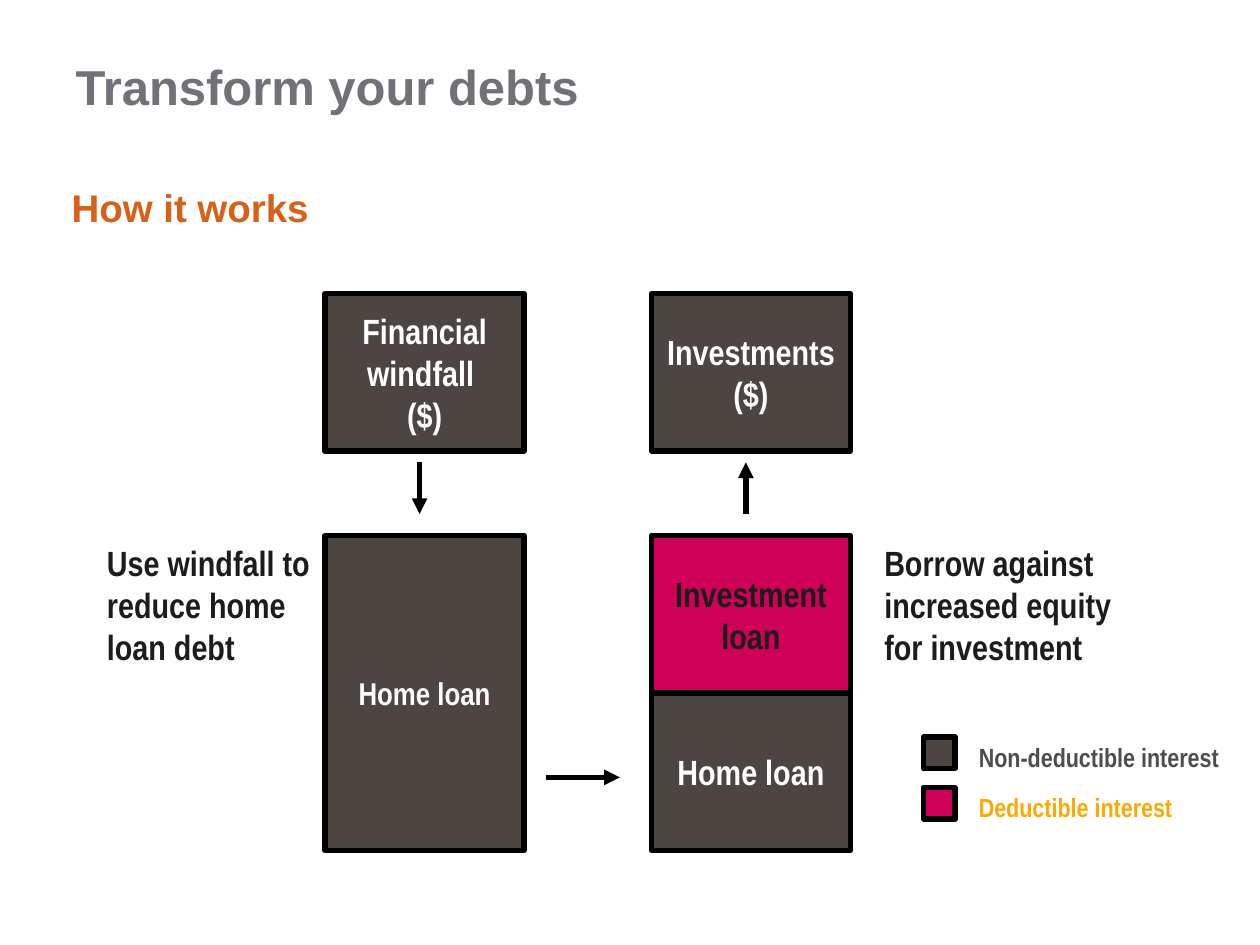
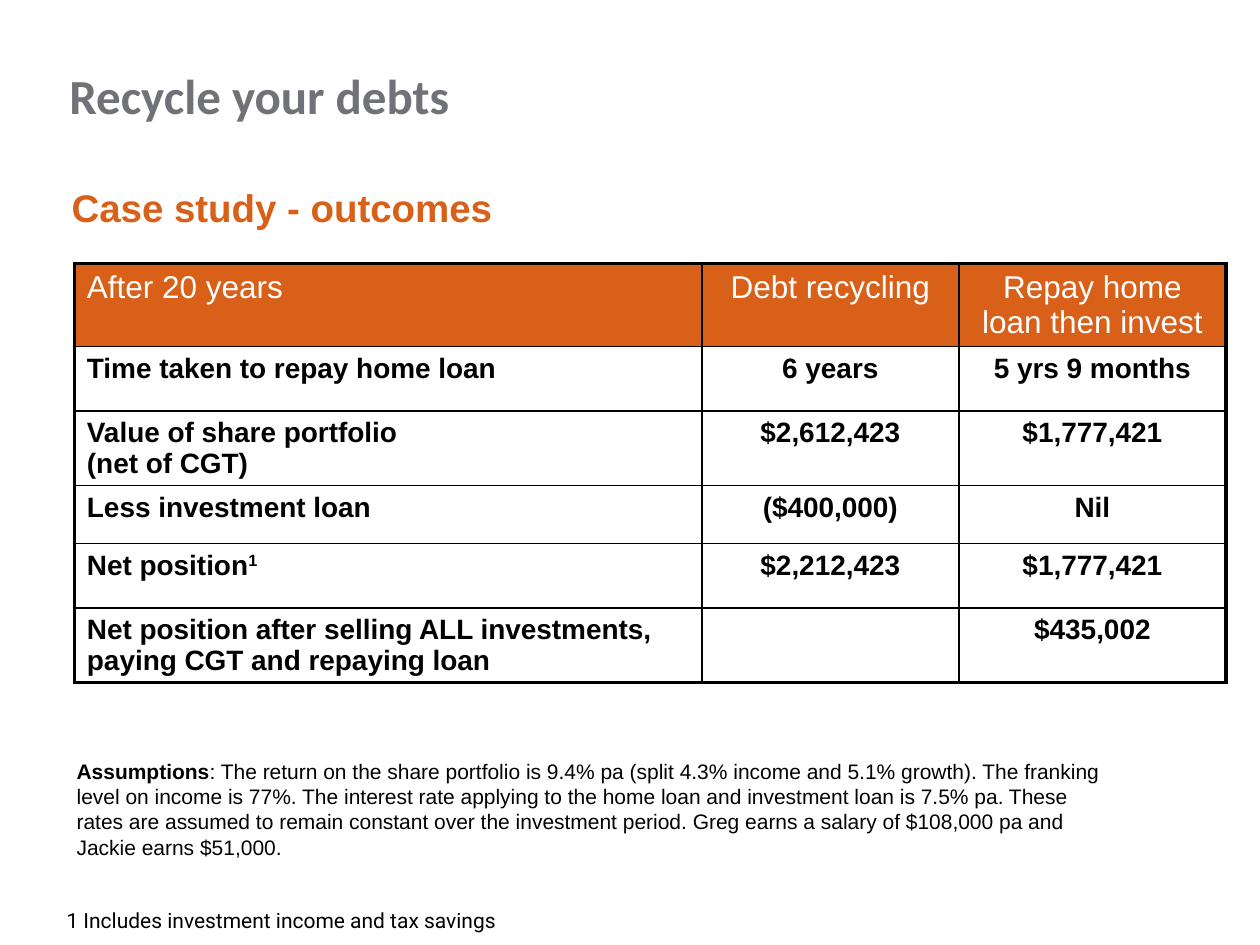
from lxml.etree import SubElement
from pptx import Presentation
from pptx.dml.color import RGBColor
from pptx.enum.shapes import MSO_CONNECTOR, MSO_SHAPE
from pptx.enum.text import MSO_ANCHOR, MSO_AUTO_SIZE, PP_ALIGN
from pptx.oxml.ns import qn
from pptx.util import Inches, Pt

LEFT, CENTER = PP_ALIGN.LEFT, PP_ALIGN.CENTER
TOP, MIDDLE = MSO_ANCHOR.TOP, MSO_ANCHOR.MIDDLE
NO_FIT = MSO_AUTO_SIZE.NONE
RECT = MSO_SHAPE.RECTANGLE
STRAIGHT = MSO_CONNECTOR.STRAIGHT

COLORS = {
    "title": "717278", "accent": "D86018", "loan": "4D4542",
    "invest": "CE0058", "dark": "1C1C1C", "gray": "4D4D4D",
    "gold": "FCA904", "black": "000000", "white": "FFFFFF",
}
SANS, NARROW = "Arial", "Arial Narrow"
THIN, THICK = 1, 2.25


def rgb(name):
    return RGBColor.from_string(COLORS[name])


def style(para, size, color, font=SANS, bold=True, align=LEFT):
    para.alignment = align
    para.font.size = Pt(size)
    para.font.name = font
    para.font.bold = bold
    para.font.color.rgb = rgb(color)


def write(frame, lines, size, color, anchor=TOP, wrap=True, **look):
    frame.auto_size = NO_FIT
    frame.word_wrap = wrap
    frame.vertical_anchor = anchor
    frame.text = "\n".join(lines)
    for para in frame.paragraphs:
        style(para, size, color, **look)


def add_text(slide, at, text, size, color, **look):
    box = slide.shapes.add_textbox(*map(Inches, at))
    write(box.text_frame, [text], size, color, **look)
    return box.text_frame


def add_slide(deck, title, at, font, head):
    """Start a slide with its gray title and orange heading."""
    slide = deck.slides.add_slide(deck.slide_layouts[5])
    holder = slide.shapes.title
    holder.left, holder.top, holder.width, holder.height = map(Inches, at)
    write(holder.text_frame, [title], 28, "title", MIDDLE, font=font)
    add_text(slide, (0.47, 1.41, 3.55, 0.47), head, 22, "accent", wrap=False)
    return slide


def add_box(slide, at, fill, lines=(), size=20, color="white", wrap=True):
    box = slide.shapes.add_shape(RECT, *map(Inches, at))
    box.shadow.inherit = False
    box.fill.solid()
    box.fill.fore_color.rgb = rgb(fill)
    box.line.color.rgb = rgb("black")
    box.line.width = Pt(3)
    if lines:
        write(box.text_frame, lines, size, color, MIDDLE, wrap,
              font=NARROW, align=CENTER)


def add_arrow(slide, start, end):
    arrow = slide.shapes.add_connector(STRAIGHT, *map(Inches, start + end))
    arrow.line.color.rgb = rgb("black")
    arrow.line.width = Pt(3)
    props = arrow.element.spPr
    SubElement(props.find(qn("a:ln")), qn("a:tailEnd"), type="triangle")
    SubElement(props, qn("a:effectLst"))


def set_border(cell, sides):
    props = cell._tc.get_or_add_tcPr()
    for side, width in sides.items():
        line = SubElement(props, qn(f"a:ln{side}"), w=str(Pt(width)))
        fill = SubElement(line, qn("a:solidFill"))
        SubElement(fill, qn("a:srgbClr"), val=COLORS["black"])


def add_table(slide, at, widths, heights, rows):
    """Grid with a thick frame, thin inner lines and an orange head row."""
    frame = slide.shapes.add_table(len(rows), len(widths), *map(Inches, at))
    table = frame.table
    table.first_row = table.horz_banding = False
    for col, width in zip(table.columns, widths):
        col.width = Inches(width)
    for row, height in zip(table.rows, heights):
        row.height = Inches(height)
    last_row, last_col = len(rows) - 1, len(widths) - 1
    for r, row in enumerate(rows):
        for c, text in enumerate(row):
            cell = table.cell(r, c)
            set_border(cell, {
                "L": THICK if c == 0 else THIN,
                "R": THICK if c == last_col else THIN,
                "T": THICK if r == 0 else THIN,
                "B": THICK if r == last_row else THIN,
            })
            para = cell.text_frame.paragraphs[0]
            para.text = text
            para.space_after = Pt(8.5)
            align = CENTER if c else LEFT
            if r == 0:
                cell.fill.solid()
                cell.fill.fore_color.rgb = rgb("accent")
                style(para, 18, "white", bold=False, align=align)
            else:
                cell.fill.background()
                style(para, 16, "black", align=align)
    return table


def make_flow(deck):
    slide = add_slide(deck, "Transform your debts", (0.5, 0.61, 6.86, 0.14),
                      SANS, "How it works")

    # Boxes in two columns
    left, right, wide, high = 2.58, 5.17, 1.58, 1.25
    top, mid = 2.33, 4.25
    add_box(slide, (left, top, wide, high), "loan",
            ["Financial windfall ", "($)"])
    add_box(slide, (right, top, wide, high), "loan", ["Investments ($)"])
    add_box(slide, (left, mid, wide, 2 * high), "loan", ["Home loan"],
            size=18, wrap=False)
    add_box(slide, (right, mid, wide, high), "invest", ["Investment loan"],
            color="dark")
    add_box(slide, (right, mid + high, wide, high), "loan", ["Home loan"])

    # Arrows in the gaps
    add_arrow(slide, (3.33, 3.67), (3.33, 4.08))
    add_arrow(slide, (5.92, 4.08), (5.92, 3.67))
    add_arrow(slide, (4.33, 6.17), (4.92, 6.17))

    # Side notes
    for x, width, note in (
        (0.75, 1.92, "Use windfall to reduce home loan debt"),
        (6.92, 2, "Borrow against increased equity for investment"),
    ):
        add_text(slide, (x, mid, width, 1.1), note, 20, "dark", font=NARROW)

    # Legend
    for y, fill, color, label in (
        (5.85, "loan", "gray", "Non-deductible interest"),
        (6.25, "invest", "gold", "Deductible interest"),
    ):
        add_box(slide, (7.33, y, 0.25, 0.25), fill)
        add_text(slide, (7.67, y - 0.02, 2.14, 0.35), label, 15, color,
                 font=NARROW)


def make_case(deck):
    slide = add_slide(deck, "Recycle your debts", (0.45, 0.55, 7.86, 0.4),
                      "Calibri", "Case study - outcomes")

    # Outcomes
    rows = [
        ("After 20 years", "Debt recycling", "Repay home loan then invest"),
        ("Time taken to repay home loan", "6 years", "5 yrs 9 months"),
        ("Value of share portfolio \v(net of CGT)", "$2,612,423",
         "$1,777,421"),
        ("Less investment loan", "($400,000)", "Nil"),
        ("Net position", "$2,212,423", "$1,777,421"),
        ("Net position after selling ALL investments, paying CGT and "
         "repaying loan", "", "$435,002"),
    ]
    table = add_table(slide, (0.59, 2.09, 9.14, 3.16), (4.98, 2.04, 2.12),
                      (0.64, 0.51, 0.53, 0.46, 0.51, 0.51), rows)
    mark = table.cell(4, 0).text_frame.paragraphs[0].add_run()
    mark.text = "1"
    mark.font._element.set("baseline", "30000")

    # Assumptions and footnote
    frame = add_text(slide, (0.51, 5.97, 8.43, 1.21), "", 12, "black",
                     bold=False)
    para = frame.paragraphs[0]
    lead = para.add_run()
    lead.text = "Assumptions"
    lead.font.bold = True
    para.add_run().text = (
        ": The return on the share portfolio is 9.4% pa (split 4.3% income "
        "and 5.1% growth). The franking level on income is 77%. The interest "
        "rate applying to the home loan and investment loan is 7.5% pa. These "
        "rates are assumed to remain constant over the investment period. "
        "Greg earns a salary of $108,000 pa and Jackie earns $51,000.")
    add_text(slide, (0.43, 7.15, 4.17, 0.3),
             "1 Includes investment income and tax savings", 12, "black",
             font="Roboto", bold=False)


def main():
    deck = Presentation()
    deck.slide_width, deck.slide_height = Inches(10), Inches(7.5)
    make_flow(deck)
    make_case(deck)
    deck.save("out.pptx")


if __name__ == "__main__":
    main()
